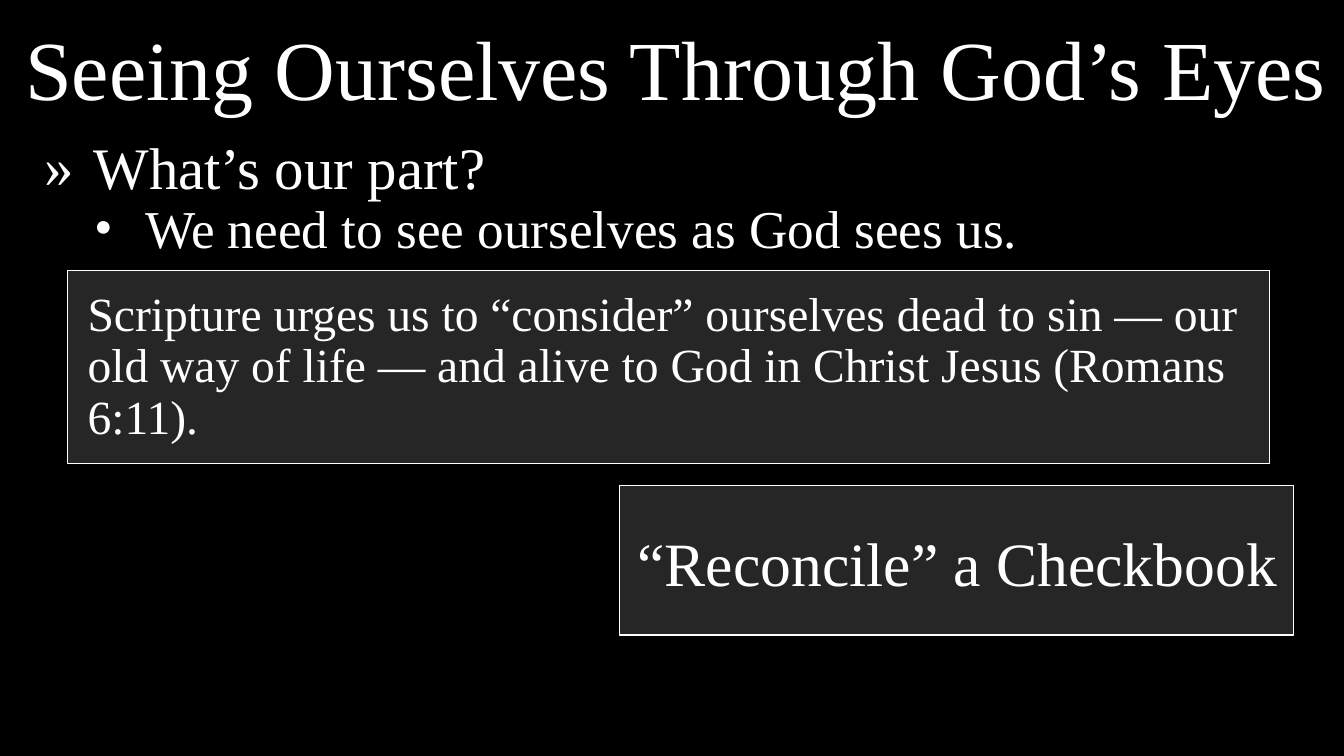
from lxml.etree import SubElement
from pptx import Presentation
from pptx.dml.color import RGBColor
from pptx.enum.shapes import MSO_SHAPE
from pptx.enum.text import MSO_ANCHOR, MSO_AUTO_SIZE, PP_ALIGN
from pptx.oxml.ns import qn
from pptx.util import Inches, Pt

BLACK = RGBColor(0x00, 0x00, 0x00)
CHARCOAL = RGBColor(0x26, 0x26, 0x26)
WHITE = RGBColor(0xFF, 0xFF, 0xFF)


class SlideBuilder:
    """Holds the shared style and the slide being built."""

    font = "Times New Roman"
    line_spacing = 0.9

    def __init__(self, presentation):
        self.slide = presentation.slides.add_slide(presentation.slide_layouts[5])
        self.slide.background.fill.solid()
        self.slide.background.fill.fore_color.rgb = BLACK

    def add_text(self, paragraph, text, size):
        run = paragraph.add_run()
        run.text = text
        run.font.name = self.font
        run.font.size = Pt(size)
        run.font.color.rgb = WHITE

    def prepare(self, frame):
        frame.word_wrap = True
        frame.auto_size = MSO_AUTO_SIZE.SHAPE_TO_FIT_TEXT
        frame.vertical_anchor = MSO_ANCHOR.TOP

    def title(self, text, left, top, width, height, size):
        heading = self.slide.shapes.title
        heading.left, heading.top = Inches(left), Inches(top)
        heading.width, heading.height = Inches(width), Inches(height)
        self.prepare(heading.text_frame)
        paragraph = heading.text_frame.paragraphs[0]
        paragraph.alignment = PP_ALIGN.LEFT
        self.add_text(paragraph, text, size)

    def text_box(self, left, top, width, height):
        box = self.slide.shapes.add_textbox(
            Inches(left), Inches(top), Inches(width), Inches(height))
        self.prepare(box.text_frame)
        return box.text_frame

    def outline(self, points, left, top, width, height):
        frame = self.text_box(left, top, width, height)
        for index, (bullet, text, size, margin, indent) in enumerate(points):
            paragraph = frame.add_paragraph() if index else frame.paragraphs[0]
            paragraph.line_spacing = self.line_spacing
            properties = paragraph._p.get_or_add_pPr()
            properties.set("marL", str(Inches(margin)))
            properties.set("indent", str(Inches(indent)))
            SubElement(properties, qn("a:buFont"), typeface=self.font)
            SubElement(properties, qn("a:buChar"), char=bullet)
            self.add_text(paragraph, text, size)

    def panel(self, left, top, width, height, border):
        card = self.slide.shapes.add_shape(
            MSO_SHAPE.RECTANGLE,
            Inches(left), Inches(top), Inches(width), Inches(height))
        card.shadow.inherit = False
        card.fill.solid()
        card.fill.fore_color.rgb = CHARCOAL
        card.line.color.rgb = WHITE
        card.line.width = Pt(border)

    def passage(self, text, left, top, width, height, size,
                alignment=PP_ALIGN.LEFT):
        paragraph = self.text_box(left, top, width, height).paragraphs[0]
        paragraph.alignment = alignment
        paragraph.line_spacing = self.line_spacing
        paragraph.space_after = Pt(6)
        self.add_text(paragraph, text, size)


def main():
    presentation = Presentation()
    presentation.slide_width = Inches(13.33)
    presentation.slide_height = Inches(7.5)
    builder = SlideBuilder(presentation)

    builder.outline([
        ("»", "What’s our part?", 42, 0.5, -0.49),
        ("•", "We need to see ourselves as God sees us.", 38, 1.01, -0.5),
    ], 0.33, 1.33, 11.65, 1.32)
    builder.title("Seeing Ourselves Through God’s Eyes",
                  0.15, 0.11, 13.13, 1.11, 60)

    builder.panel(0.67, 2.68, 11.92, 1.92, 0.25)
    builder.passage(
        "Scripture urges us to “consider” ourselves dead to sin — our old way "
        "of life — and alive to God in Christ Jesus (Romans 6:11).",
        0.77, 2.83, 11.71, 1.65, 34)

    builder.panel(6.14, 4.82, 6.69, 1.48, 0.75)
    builder.passage("“Reconcile” a Checkbook",
                    6.21, 5.24, 6.58, 0.77, 44, PP_ALIGN.CENTER)

    presentation.save("out.pptx")


if __name__ == "__main__":
    main()
